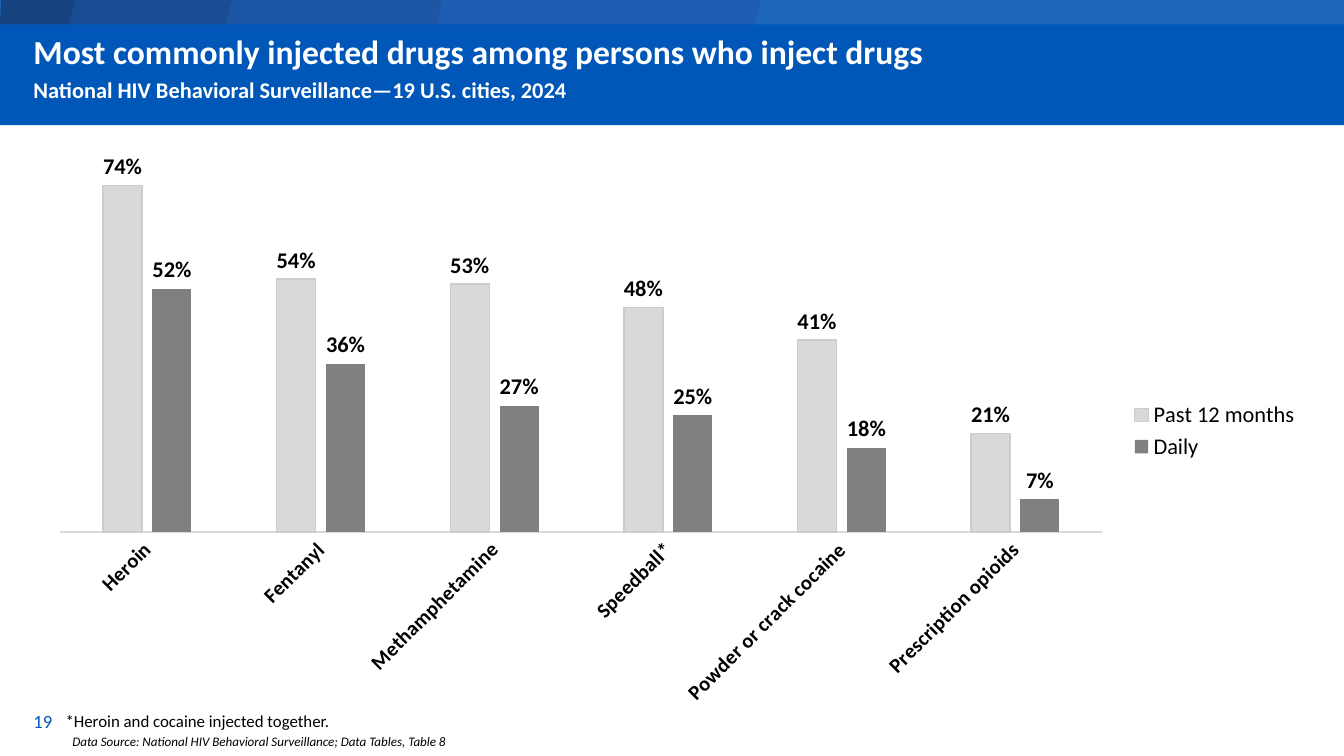
from dataclasses import dataclass

from lxml.etree import SubElement
from pptx import Presentation
from pptx.chart.chart import Chart
from pptx.chart.data import CategoryChartData
from pptx.dml.color import RGBColor
from pptx.enum.chart import XL_CHART_TYPE, XL_LABEL_POSITION, XL_LEGEND_POSITION, XL_TICK_MARK
from pptx.enum.shapes import MSO_SHAPE
from pptx.enum.text import MSO_ANCHOR
from pptx.oxml.ns import qn
from pptx.shapes.base import BaseShape
from pptx.slide import Slide
from pptx.text.text import Font
from pptx.util import Pt

FONT_NAME = "Calibri"
WHITE = RGBColor(0xFF, 0xFF, 0xFF)
BLACK = RGBColor(0x00, 0x00, 0x00)
BLUE = RGBColor(0x00, 0x57, 0xB7)
BAND_DARKEST = RGBColor(0x16, 0x43, 0x80)
BAND_DARK = RGBColor(0x19, 0x4D, 0x93)
BAND_MIDDLE = RGBColor(0x1C, 0x56, 0xA4)
BAND_LIGHT = RGBColor(0x1E, 0x5D, 0xB2)
BAND_LIGHTEST = RGBColor(0x1E, 0x66, 0xB8)
LIGHT_GREY = RGBColor(0xD9, 0xD9, 0xD9)
OUTLINE_GREY = RGBColor(0xCC, 0xCC, 0xCC)
DARK_GREY = RGBColor(0x7F, 0x80, 0x80)

SLIDE_WIDTH, SLIDE_HEIGHT = 720, 405
BAND_HEIGHT = 13.5


@dataclass(frozen=True)
class Block:
    kind: MSO_SHAPE
    left: float
    top: float
    width: float
    height: float
    color: RGBColor


@dataclass(frozen=True)
class Line:
    text: str
    format: dict
    color: RGBColor = BLACK
    space_before: float = 0


@dataclass(frozen=True)
class TextBlock:
    left: float
    top: float
    width: float
    height: float
    lines: tuple[Line, ...]
    anchor: MSO_ANCHOR = MSO_ANCHOR.TOP


@dataclass(frozen=True)
class Series:
    name: str
    values: tuple[float, ...]
    color: RGBColor
    outline: RGBColor | None = None


BACK_BAND = Block(MSO_SHAPE.RECTANGLE, 0, 0, SLIDE_WIDTH, BAND_HEIGHT, BAND_LIGHTEST)
HEADER_BLOCKS = (
    Block(MSO_SHAPE.PARALLELOGRAM, 36.7, 0, 110, BAND_HEIGHT, BAND_DARK),
    Block(MSO_SHAPE.PARALLELOGRAM, 121, 0, 144, BAND_HEIGHT, BAND_MIDDLE),
    Block(MSO_SHAPE.PARALLELOGRAM, 234, 0, 173.5, BAND_HEIGHT, BAND_LIGHT),
    Block(MSO_SHAPE.RECTANGLE, 0, 13, SLIDE_WIDTH, 54, BLUE),
)

TEXT_BLOCKS = (
    TextBlock(10.8, 13, 544, 42.5, (
        Line("Most commonly injected drugs among persons who inject drugs",
             {"size": Pt(18), "bold": True}, WHITE),
        Line("National HIV Behavioral Surveillance—19 U.S. cities, 2024",
             {"size": Pt(12), "bold": True}, WHITE, 2.4),
    )),
    TextBlock(28, 377.3, 162, 18, (
        Line("*Heroin and cocaine injected together.", {"size": Pt(9)}),)),
    TextBlock(10.8, 375.5, 162, 21.6, (
        Line("19", {"size": Pt(10)}, BLUE),), MSO_ANCHOR.MIDDLE),
    TextBlock(31.7, 389.5, 245.5, 15.8, (
        Line("Data Source: National HIV Behavioral Surveillance; Data Tables, Table 8",
             {"size": Pt(7), "italic": True}),)),
)

DRUGS = ("Heroin", "Fentanyl", "Methamphetamine", "Speedball*",
         "Powder or crack cocaine", "Prescription opioids")
SERIES = (
    Series("Past 12 months", (0.74, 0.54, 0.53, 0.48, 0.41, 0.21), LIGHT_GREY, OUTLINE_GREY),
    Series("Daily", (0.52, 0.36, 0.27, 0.25, 0.18, 0.07), DARK_GREY),
)
PLOT_AREA = {"x": 0.02, "y": 0.024, "w": 0.815, "h": 0.653}


def apply_font(font: Font, color: RGBColor, format_values: dict) -> None:
    font.color.rgb = color
    for name, value in {"name": FONT_NAME, **format_values}.items():
        setattr(font, name, value)


def fill_plain(shape: BaseShape, color: RGBColor) -> None:
    shape.shadow.inherit = False
    shape.fill.solid()
    shape.fill.fore_color.rgb = color
    shape.line.fill.background()


def add_block(slide: Slide, block: Block) -> None:
    shape = slide.shapes.add_shape(
        block.kind, Pt(block.left), Pt(block.top), Pt(block.width), Pt(block.height))
    fill_plain(shape, block.color)


def add_band_corner(slide: Slide) -> None:
    """Draw the darkest piece of the top band, slanted on its right side."""
    builder = slide.shapes.build_freeform(Pt(0), Pt(BAND_HEIGHT))
    builder.add_line_segments(
        [(Pt(0.7), Pt(0)), (Pt(57.6), Pt(0)), (Pt(53.3), Pt(BAND_HEIGHT))], close=True)
    fill_plain(builder.convert_to_shape(), BAND_DARKEST)


def add_text_block(slide: Slide, block: TextBlock) -> None:
    frame = slide.shapes.add_textbox(
        Pt(block.left), Pt(block.top), Pt(block.width), Pt(block.height)).text_frame
    frame.word_wrap = True
    frame.vertical_anchor = block.anchor
    for index, line in enumerate(block.lines):
        paragraph = frame.add_paragraph() if index else frame.paragraphs[0]
        if line.space_before:
            paragraph.space_before = Pt(line.space_before)
        run = paragraph.add_run()
        run.text = line.text
        apply_font(run.font, line.color, line.format)


def place_plot_area(chart: Chart) -> None:
    """Fix the inner plot area as fractions of the chart frame."""
    plot_area = chart.plots[0]._element.getparent()
    layout = plot_area.find(qn("c:layout"))
    if layout is None:
        layout = SubElement(plot_area, qn("c:layout"))
        plot_area.insert(0, layout)
    manual = SubElement(layout, qn("c:manualLayout"))
    settings = {"layoutTarget": "inner", "xMode": "edge", "yMode": "edge", **PLOT_AREA}
    for name, value in settings.items():
        SubElement(manual, qn(f"c:{name}")).set("val", str(value))


def add_drug_chart(slide: Slide) -> None:
    data = CategoryChartData(number_format="0%")
    data.categories = DRUGS
    for series in SERIES:
        data.add_series(series.name, series.values)
    chart = slide.shapes.add_chart(
        XL_CHART_TYPE.COLUMN_CLUSTERED, Pt(18.7), Pt(77), Pt(684.7), Pt(307.5), data).chart
    chart.has_title = False
    apply_font(chart.font, BLACK, {"size": Pt(10)})
    chart.has_legend = True
    chart.legend.position = XL_LEGEND_POSITION.RIGHT
    chart.legend.include_in_layout = False
    apply_font(chart.legend.font, BLACK, {"size": Pt(12)})

    value_axis = chart.value_axis
    axis_values = {"visible": False, "has_major_gridlines": False,
                   "minimum_scale": 0, "maximum_scale": 0.8, "major_unit": 0.2}
    for name, value in axis_values.items():
        setattr(value_axis, name, value)

    category_axis = chart.category_axis
    category_axis.major_tick_mark = XL_TICK_MARK.NONE
    category_axis.format.line.color.rgb = LIGHT_GREY
    category_axis.format.line.width = Pt(0.75)
    apply_font(category_axis.tick_labels.font, BLACK, {"size": Pt(11), "bold": True})
    category_axis._element.find(qn("c:txPr")).find(qn("a:bodyPr")).set("rot", "-2700000")

    plot = chart.plots[0]
    plot.vary_by_categories = False
    plot.gap_width = 219
    plot.overlap = -27
    for series, bars in zip(SERIES, plot.series):
        bars.format.fill.solid()
        bars.format.fill.fore_color.rgb = series.color
        if series.outline:
            bars.format.line.color.rgb = series.outline
            bars.format.line.width = Pt(0.75)
        labels = bars.data_labels
        label_values = {"show_value": True, "number_format": "0%",
                        "number_format_is_linked": False,
                        "position": XL_LABEL_POSITION.OUTSIDE_END}
        for name, value in label_values.items():
            setattr(labels, name, value)
        apply_font(labels.font, BLACK, {"size": Pt(12), "bold": True})
    place_plot_area(chart)


def main() -> None:
    presentation = Presentation()
    presentation.slide_width = Pt(SLIDE_WIDTH)
    presentation.slide_height = Pt(SLIDE_HEIGHT)
    slide = presentation.slides.add_slide(presentation.slide_layouts[6])
    add_block(slide, BACK_BAND)
    add_band_corner(slide)
    for block in HEADER_BLOCKS:
        add_block(slide, block)
    add_drug_chart(slide)
    for text_block in TEXT_BLOCKS:
        add_text_block(slide, text_block)
    presentation.save("out.pptx")


if __name__ == "__main__":
    main()
